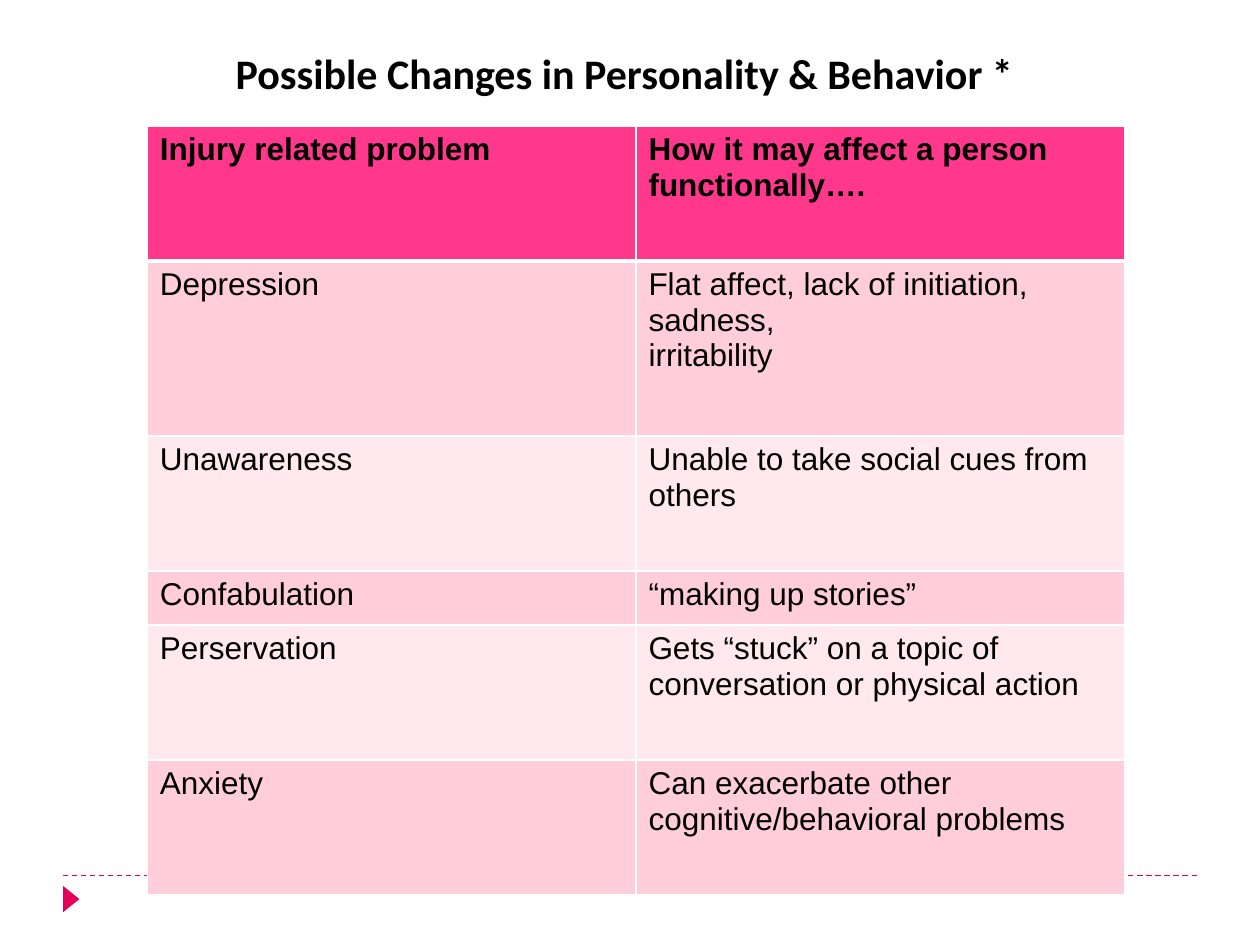
import pptx
import pptx.util
import pptx.dml.color
import pptx.enum.dml
import pptx.enum.shapes
import pptx.enum.text
import pptx.oxml
import pptx.oxml.ns
from dataclasses import dataclass

Cm, Pt = pptx.util.Cm, pptx.util.Pt


@dataclass(frozen=True)
class Theme:
    ink: str = "000000"
    paper: str = "FFFFFF"
    accent: str = "E40059"
    head: str = "FF388C"
    bands: tuple = ("FFCEDA", "FFE8EE")
    title: int = 24
    body: int = 18
    display: str = "Calibri"
    text: str = "Arial"


THEME = Theme()
ROWS = [
    ("Injury related problem", "How it may affect a person functionally…."),
    ("Depression", "Flat affect, lack of initiation, sadness,\nirritability"),
    ("Unawareness", "Unable to take social cues from others"),
    ("Confabulation", "“making up stories”"),
    ("Perservation", "Gets “stuck” on a topic of conversation or physical action"),
    ("Anxiety", "Can exacerbate other cognitive/behavioral problems"),
]
TALL = 2.72
HEIGHTS = [TALL, 3.53, TALL, 1.09, TALL, TALL]


def rgb(code):
    return pptx.dml.color.RGBColor.from_string(code)


def write(frame, text, size=THEME.body, font=THEME.text, color=THEME.ink,
          bold=False, align=pptx.enum.text.PP_ALIGN.LEFT):
    frame.text = text
    frame.word_wrap = True
    for par in frame.paragraphs:
        par.alignment = align
        for run in par.runs:
            run.font.size = Pt(size)
            run.font.name = font
            run.font.bold = bold
            run.font.color.rgb = rgb(color)


def edge(cell, **widths):
    """Draw cell borders; keys are L, R, T, B and values are points."""
    props = cell._tc.get_or_add_tcPr()
    for side in "LRTB":
        props.append(pptx.oxml.parse_xml(
            f'<a:ln{side} {pptx.oxml.ns.nsdecls("a")} w="{Pt(widths.get(side, 1))}">'
            f'<a:solidFill><a:srgbClr val="{THEME.paper}"/></a:solidFill></a:ln{side}>'))


def heading(slide, left, top, width, height):
    title = slide.shapes.title
    title.left, title.top = Cm(left), Cm(top)
    title.width, title.height = Cm(width), Cm(height)
    write(title.text_frame, "Possible Changes in Personality & Behavior *",
          size=THEME.title, font=THEME.display, bold=True,
          align=pptx.enum.text.PP_ALIGN.CENTER)
    title.text_frame.vertical_anchor = pptx.enum.text.MSO_ANCHOR.TOP


def footer(slide, left, top, width):
    """Dashed rule with a small arrow below its left end."""
    rule = slide.shapes.add_connector(
        pptx.enum.shapes.MSO_CONNECTOR.STRAIGHT,
        Cm(left), Cm(top), Cm(left + width), Cm(top))
    rule.line.color.rgb = rgb(THEME.accent)
    rule.line.width = Pt(0.75)
    rule.line.dash_style = pptx.enum.dml.MSO_LINE.DASH
    rule._element.spPr.append(pptx.oxml.parse_xml(
        f'<a:effectLst {pptx.oxml.ns.nsdecls("a")}/>'))

    mark = slide.shapes.add_shape(
        pptx.enum.shapes.MSO_SHAPE.ISOSCELES_TRIANGLE,
        Cm(left - 0.1), Cm(top + 0.31), Cm(0.53), Cm(0.33))
    mark.rotation = 90
    mark.shadow.inherit = False
    mark.fill.solid()
    mark.fill.fore_color.rgb = rgb(THEME.accent)
    mark.line.fill.background()


def grid(slide, left, top, width):
    table = slide.shapes.add_table(
        len(ROWS), 2, Cm(left), Cm(top), Cm(width), Cm(sum(HEIGHTS))).table
    for col in table.columns:
        col.width = Cm(width / 2)
    for i, (texts, height) in enumerate(zip(ROWS, HEIGHTS)):
        table.rows[i].height = Cm(height)
        for j, text in enumerate(texts):
            cell = table.cell(i, j)
            edge(cell, T=3 if i == 1 else 1, B=3 if i == 0 else 1)
            cell.fill.solid()
            cell.fill.fore_color.rgb = rgb(
                THEME.bands[(i - 1) % 2] if i else THEME.head)
            write(cell.text_frame, text, bold=i == 0)


def main():
    deck = pptx.Presentation()
    deck.slide_width, deck.slide_height = Cm(25.4), Cm(19.05)
    slide = deck.slides.add_slide(deck.slide_layouts[5])
    footer(slide, 1.27, 17.65, 22.86)
    heading(slide, 0.84, 0.84, 23.5, 2.06)
    grid(slide, 2.97, 2.54, 19.7)
    deck.save("out.pptx")


if __name__ == "__main__":
    main()
